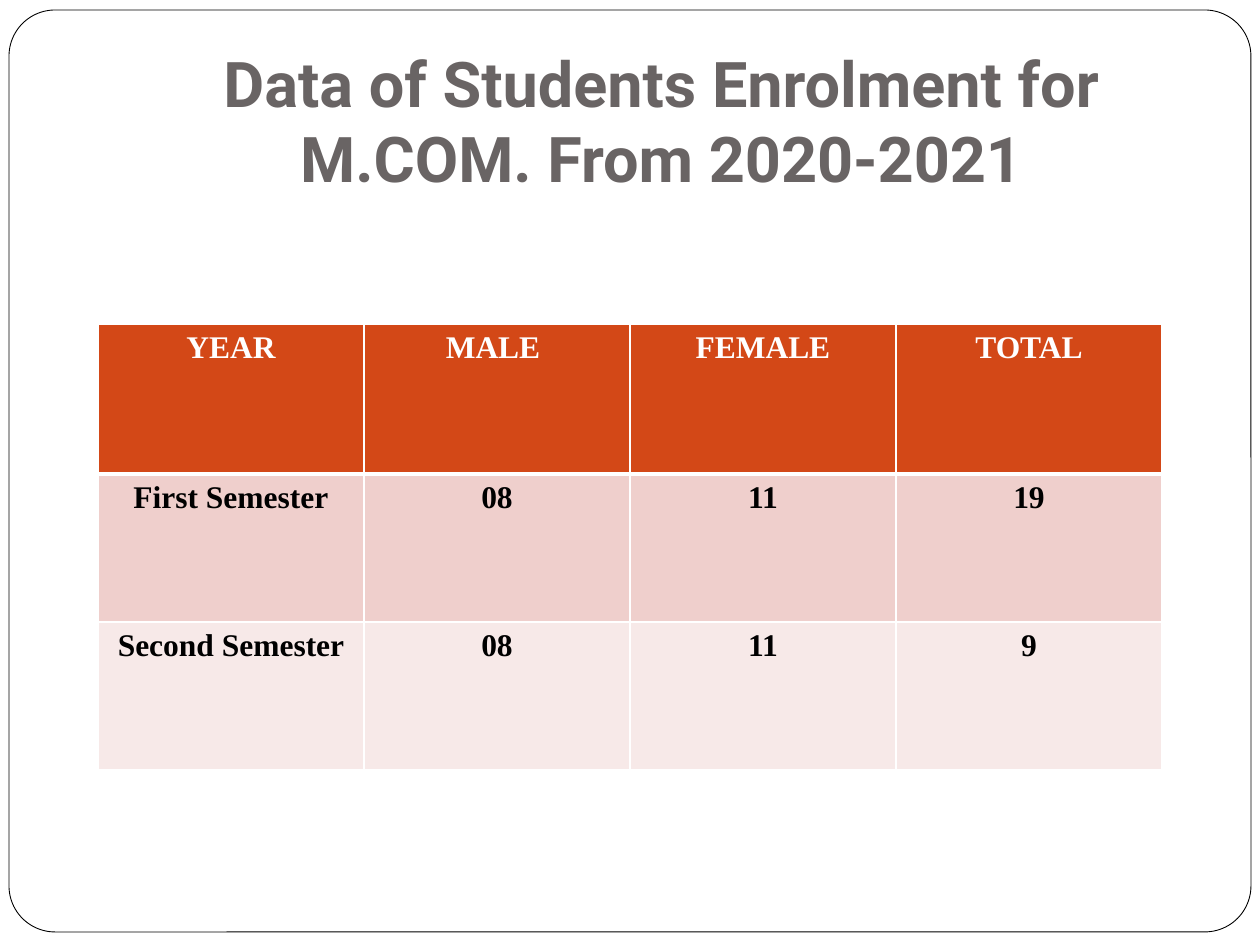
from lxml import etree
from pptx import Presentation
from pptx.dml.color import RGBColor
from pptx.enum.shapes import MSO_SHAPE as Shape
from pptx.enum.text import MSO_ANCHOR as Anchor, MSO_AUTO_SIZE as AutoSize, PP_ALIGN as Align
from pptx.oxml.ns import qn
from pptx.util import Emu, Pt

PX = 914400 // 126
WHITE = RGBColor(0xFF, 0xFF, 0xFF)
BLACK = RGBColor(0, 0, 0)
GREY = RGBColor(0x69, 0x64, 0x64)
ORANGE = RGBColor(0xD3, 0x48, 0x17)
ROSE = RGBColor(0xEF, 0xCF, 0xCC)
PALE_ROSE = RGBColor(0xF7, 0xE9, 0xE8)

ENROLMENT = [
    ["YEAR", "MALE ", "FEMALE", "TOTAL"],
    ["First Semester", "08", "11", "19"],
    ["Second Semester", "08", "11", "9"],
]
ROW_FILLS = [ORANGE, ROSE, PALE_ROSE]
ROW_HEIGHTS = [150, 148, 148]


def px(*lengths):
    return [Emu(length * PX) for length in lengths]


def write_text(frame, text, font="Times New Roman", size=18, color=BLACK,
               bold=True, align=Align.CENTER):
    paragraph = frame.paragraphs[0]
    paragraph.alignment = align
    run = paragraph.add_run()
    run.text = text
    run.font.name = font
    run.font.size = Pt(size)
    run.font.bold = bold
    run.font.color.rgb = color


def add_frame(slide):
    """Draw the rounded outline around the whole slide."""
    shape = slide.shapes.add_shape(Shape.ROUNDED_RECTANGLE, *px(9, 10, 1242, 922))
    shape.adjustments[0] = 0.05
    shape.shadow.inherit = False
    shape.fill.solid()
    shape.fill.fore_color.rgb = WHITE
    shape.line.color.rgb = BLACK
    shape.line.width = Pt(0.5)


def add_title(slide, text):
    frame = slide.shapes.add_textbox(*px(126, 129, 1071, 79)).text_frame
    frame.word_wrap = True
    frame.auto_size = AutoSize.NONE
    frame.vertical_anchor = Anchor.BOTTOM
    frame.margin_bottom = frame.margin_left
    write_text(frame, text, font="Roboto", size=36, color=GREY)


def set_borders(cell, **widths):
    """Give the cell white borders, widths in points by side: lnL, lnR, lnT, lnB."""
    properties = cell._tc.get_or_add_tcPr()
    for index, (side, width) in enumerate(widths.items()):
        line = etree.Element(qn(f"a:{side}"), w=str(Pt(width)))
        fill = etree.SubElement(line, qn("a:solidFill"))
        etree.SubElement(fill, qn("a:srgbClr"), val=str(WHITE))
        properties.insert(index, line)


def add_enrolment_table(slide):
    table = slide.shapes.add_table(
        len(ENROLMENT), len(ENROLMENT[0]), *px(98, 324, 1064, sum(ROW_HEIGHTS))).table
    for row, height in zip(table.rows, ROW_HEIGHTS):
        row.height = Emu(height * PX)
    for row_index, (values, fill) in enumerate(zip(ENROLMENT, ROW_FILLS)):
        is_header = row_index == 0
        for column_index, value in enumerate(values):
            cell = table.cell(row_index, column_index)
            cell.fill.solid()
            cell.fill.fore_color.rgb = fill
            set_borders(cell, lnL=1, lnR=1, lnT=3 if row_index == 1 else 1,
                        lnB=3 if is_header else 1)
            write_text(cell.text_frame, value, color=WHITE if is_header else BLACK)


def main():
    presentation = Presentation()
    presentation.slide_width, presentation.slide_height = px(1260, 945)
    slide = presentation.slides.add_slide(presentation.slide_layouts[6])
    add_frame(slide)
    add_title(slide, "Data of Students Enrolment for M.COM. From 2020-2021")
    add_enrolment_table(slide)
    presentation.save("out.pptx")


if __name__ == "__main__":
    main()
